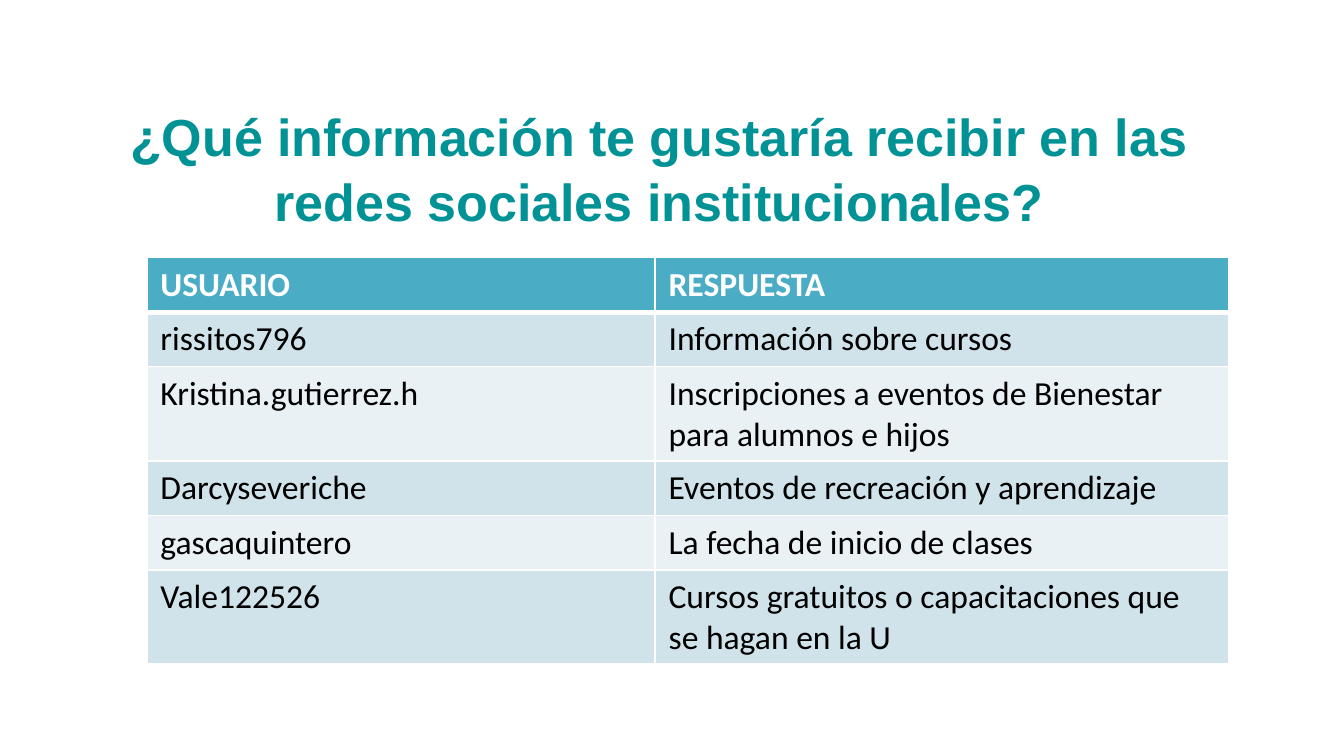
from lxml.etree import SubElement
from pptx import Presentation
from pptx.dml.color import RGBColor
from pptx.enum.text import MSO_ANCHOR, PP_ALIGN
from pptx.oxml.ns import qn
from pptx.util import Emu, Pt

EMU_PER_PX = 9525
WHITE = "FFFFFF"
BLACK = "000000"
TEAL = "019296"
HEADER_FILL = "4BACC6"
BAND_FILLS = ["D0E3EA", "E9F1F5"]

TITLE = "¿Qué información te gustaría recibir en las redes sociales institucionales?"
ROWS = [
    ("USUARIO", "RESPUESTA"),
    ("rissitos796", "Información sobre cursos"),
    ("Kristina.gutierrez.h", "Inscripciones a eventos de Bienestar para alumnos e hijos"),
    ("Darcyseveriche", "Eventos de recreación y aprendizaje"),
    ("gascaquintero", "La fecha de inicio de clases"),
    ("Vale122526", "Cursos gratuitos o capacitaciones que se hagan en la U"),
]


def px(length):
    return Emu(length * EMU_PER_PX)


def color(hex_string):
    return RGBColor.from_string(hex_string)


def add_run(paragraph, text, font_name, size, hex_string, bold):
    run = paragraph.add_run()
    run.text = text
    run.font.name = font_name
    run.font.size = Pt(size)
    run.font.bold = bold
    run.font.color.rgb = color(hex_string)


def add_title(slide, left, top, width, height):
    shape = slide.shapes.add_textbox(px(left), px(top), px(width), px(height))
    frame = shape.text_frame
    frame.word_wrap = True
    frame.vertical_anchor = MSO_ANCHOR.BOTTOM
    frame.margin_left = frame.margin_right = px(10)
    frame.margin_top = frame.margin_bottom = px(0)
    paragraph = frame.paragraphs[0]
    paragraph.alignment = PP_ALIGN.CENTER
    paragraph.line_spacing = 1.05
    add_run(paragraph, TITLE, "Arial", 27.9, TEAL, True)


def set_borders(cell, bottom_width):
    properties = cell._tc.get_or_add_tcPr()
    for side, width in (("L", 1), ("R", 1), ("T", 1), ("B", bottom_width)):
        line = SubElement(properties, qn(f"a:ln{side}"), w=str(Pt(width)))
        fill = SubElement(line, qn("a:solidFill"))
        SubElement(fill, qn("a:srgbClr"), val=WHITE)


def add_answer_table(slide, left, top, column_widths, row_height):
    shape = slide.shapes.add_table(
        len(ROWS), len(column_widths), px(left), px(top),
        px(sum(column_widths)), px(row_height * len(ROWS)),
    )
    table = shape.table
    for column, width in zip(table.columns, column_widths):
        column.width = px(width)
    for row_index, texts in enumerate(ROWS):
        is_header = row_index == 0
        fill = HEADER_FILL if is_header else BAND_FILLS[(row_index - 1) % 2]
        for column_index, text in enumerate(texts):
            cell = table.cell(row_index, column_index)
            set_borders(cell, 3 if is_header else 1)
            cell.fill.solid()
            cell.fill.fore_color.rgb = color(fill)
            add_run(cell.text_frame.paragraphs[0], text, "Calibri", 18,
                    WHITE if is_header else BLACK, is_header)


def main():
    presentation = Presentation()
    presentation.slide_width = px(960)
    presentation.slide_height = px(540)
    slide = presentation.slides.add_slide(presentation.slide_layouts[6])
    add_title(slide, 70, 138, 801, 28)
    add_answer_table(slide, 105, 184, (363, 410), 39)
    presentation.save("out.pptx")


if __name__ == "__main__":
    main()
